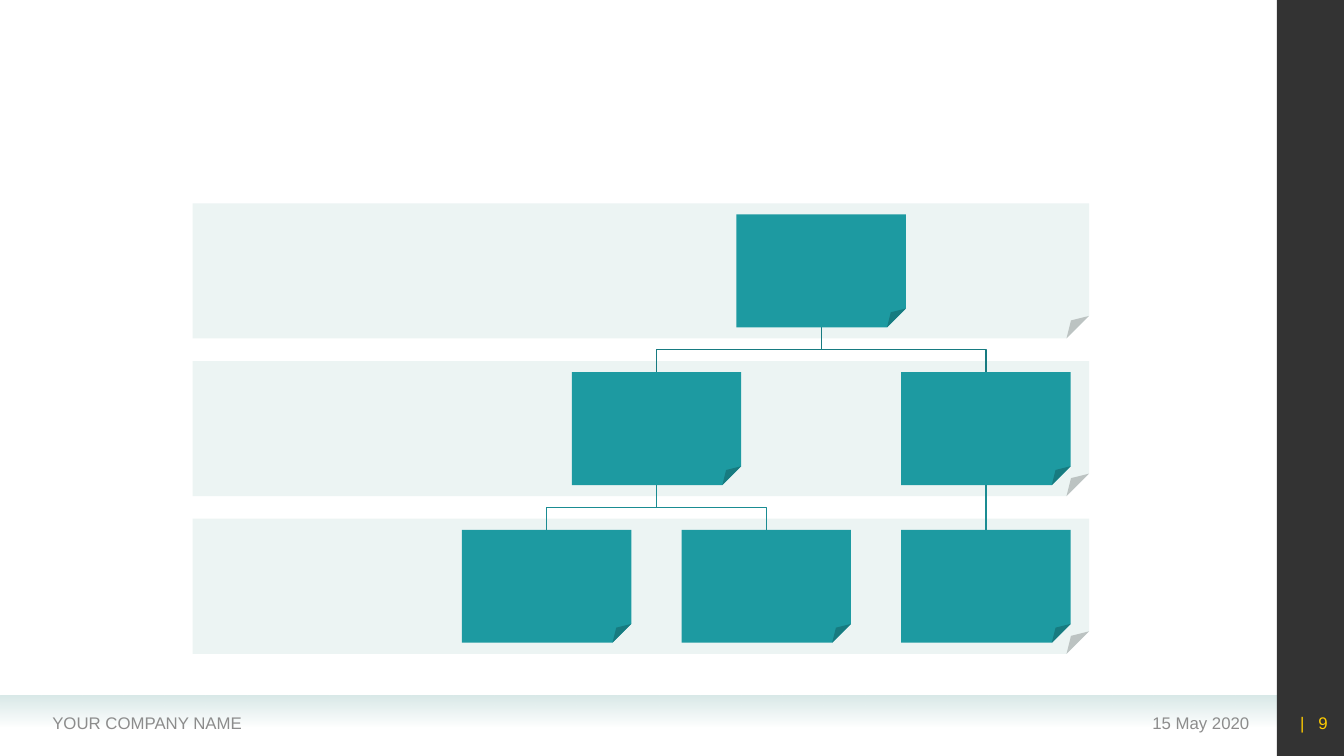
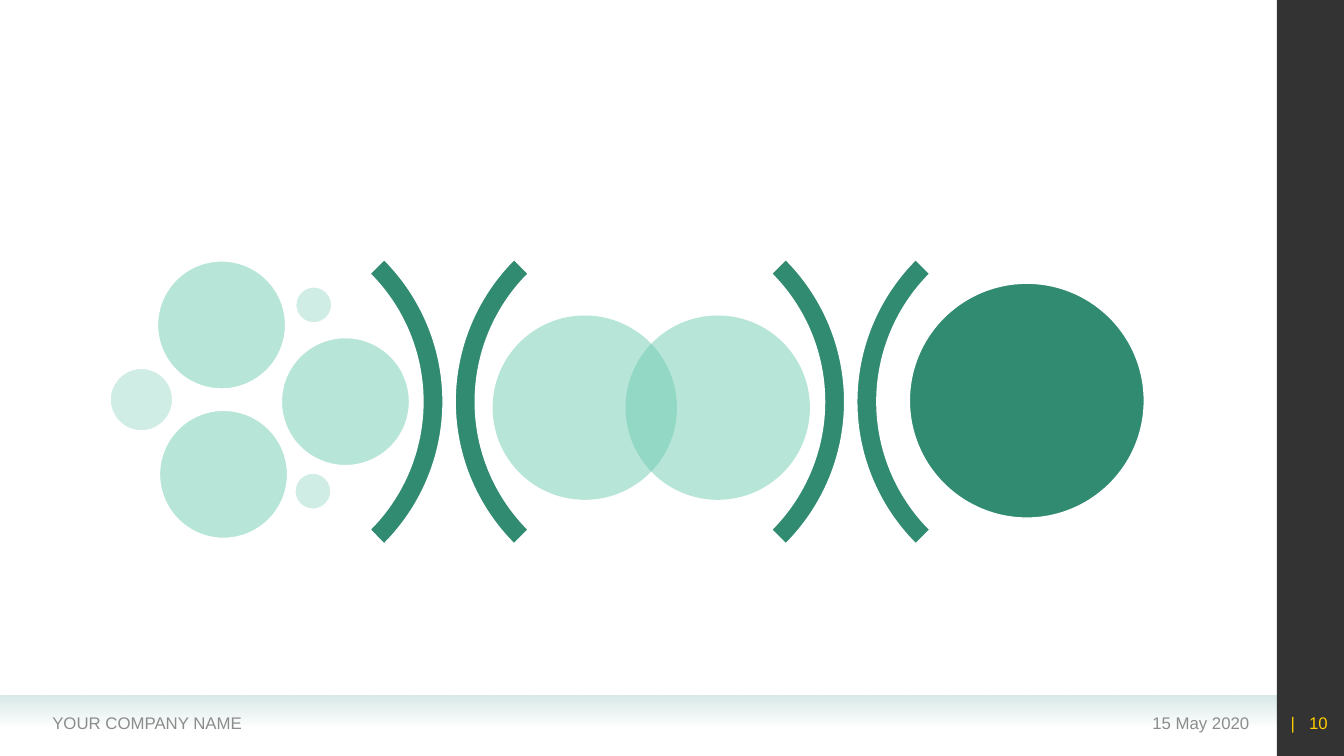
import dataclasses

import pptx
import pptx.dml.color
import pptx.enum.shapes
import pptx.enum.text
import pptx.oxml
import pptx.oxml.ns
import pptx.util

SHAPES = pptx.enum.shapes.MSO_SHAPE
ALIGN = pptx.enum.text.PP_ALIGN
qn = pptx.oxml.ns.qn


@dataclasses.dataclass(frozen=True)
class Theme:
    font: str = "Arial"
    footer_size: int = 12
    line_width: int = 1
    number_gap: int = 667
    white: str = "FFFFFF"
    footer_band: str = "D9E9E8"
    rail: str = "000000"
    footer_text: str = "8C8C8C"
    page_number: str = "FFCC00"
    level_band: str = "ECF4F3"
    card: str = "1D9AA1"
    links: tuple = ("177B81", "1A8C92")
    strong: str = "318B71"
    soft: str = "70CDB2"
    pale: str = "A0DDCC"


THEME = Theme()


@dataclasses.dataclass(frozen=True)
class Box:
    left: float
    top: float
    width: float
    height: float

    def area(self, left, top, width, height):
        return Box(
            self.left + self.width * left / 100,
            self.top + self.height * top / 100,
            self.width * width / 100,
            self.height * height / 100,
        )

    def lengths(self):
        sides = (self.left, self.top, self.width, self.height)
        return [pptx.util.Inches(side) for side in sides]

    @property
    def center_x(self):
        return self.left + self.width / 2

    @property
    def center_y(self):
        return self.top + self.height / 2

    @property
    def bottom(self):
        return self.top + self.height


SLIDE = Box(0, 0, 13.33, 7.5)


def rgb(value):
    return pptx.dml.color.RGBColor.from_string(value)


def set_opacity(shape, *percentages):
    colors = shape.element.spPr.findall(".//" + qn("a:srgbClr"))
    for color, percentage in zip(colors, percentages):
        alpha = pptx.oxml.parse_xml(
            f'<a:alpha {pptx.oxml.ns.nsdecls("a")} val="{percentage * 1000}"/>'
        )
        color.append(alpha)


def add_filled(page, kind, box, color, opacity=100, outlined=False):
    shape = page.shapes.add_shape(kind, *box.lengths())
    shape.shadow.inherit = False
    shape.fill.solid()
    shape.fill.fore_color.rgb = rgb(color)
    if opacity < 100:
        set_opacity(shape, opacity)
    if outlined:
        style_line(shape.line, THEME.white)
    else:
        shape.line.fill.background()
    return shape


def style_line(line, color):
    line.color.rgb = rgb(color)
    line.width = pptx.util.Pt(THEME.line_width)


def add_label(page, box, texts, color, align=ALIGN.LEFT):
    label = page.shapes.add_textbox(*box.lengths())
    frame = label.text_frame
    frame.word_wrap = True
    frame.vertical_anchor = pptx.enum.text.MSO_ANCHOR.MIDDLE
    para = frame.paragraphs[0]
    para.alignment = align
    for text in texts:
        span = para.add_run()
        span.text = text
        span.font.name = THEME.font
        span.font.size = pptx.util.Pt(THEME.footer_size)
        span.font.color.rgb = rgb(color)
    return label


def add_frame(page, box, number):
    band = add_filled(page, SHAPES.RECTANGLE, box.area(0, 92, 95, 4.13), THEME.footer_band)
    band.fill.gradient()
    band.fill.gradient_angle = 270
    for stop, position in zip(band.fill.gradient_stops, (0, 1)):
        stop.color.rgb = rgb(THEME.footer_band)
        stop.position = position
    set_opacity(band, 100, 0)

    add_filled(page, SHAPES.RECTANGLE, box.area(95, 0, 5, 100), THEME.rail, 80)

    footer = box.area(0, 92.93, 100, 5.33)
    add_label(page, footer.area(68.25, 0, 25.45, 100), ["15 May 2020"],
              THEME.footer_text, ALIGN.RIGHT)
    add_label(page, footer.area(3.15, 0, 36.75, 100), ["YOUR COMPANY NAME"],
              THEME.footer_text)
    label = add_label(page, footer.area(94.5, 0, 5.03, 100), ["|", " ", str(number)],
                      THEME.page_number, ALIGN.RIGHT)
    gap = label.element.findall(".//" + qn("a:rPr"))[1]
    gap.set("spc", str(THEME.number_gap))


def add_link(page, start, end, color):
    points = [start, end]
    if abs(start[0] - end[0]) > 0.01:
        middle = (start[1] + end[1]) / 2
        points[1:1] = [(start[0], middle), (end[0], middle)]
    points = [(pptx.util.Inches(x), pptx.util.Inches(y)) for x, y in points]
    if len(points) == 2:
        link = page.shapes.add_connector(
            pptx.enum.shapes.MSO_CONNECTOR.STRAIGHT, *points[0], *points[1]
        )
        style_line(link.line, color)
        link.element.spPr.append(
            pptx.oxml.parse_xml(f'<a:effectLst {pptx.oxml.ns.nsdecls("a")}/>')
        )
    else:
        outline = page.shapes.build_freeform(*points[0])
        outline.add_line_segments(points[1:], close=False)
        link = outline.convert_to_shape()
        link.shadow.inherit = False
        link.fill.background()
        style_line(link.line, color)


def add_branch(page, box, node, level=0):
    if isinstance(node, int):
        children = []
        center = 39.5 + 24.5 * node
    else:
        children = [add_branch(page, box, child, level + 1) for child in node]
        center = sum(child_center for child_center, _ in children) / len(children)
    place = box.area(center - 9.45, 35 * level + 2.46, 18.9, 25.06)
    for _, child in children:
        add_link(page, (place.center_x, place.bottom), (child.center_x, child.top),
                 THEME.links[level])
    add_filled(page, SHAPES.FOLDED_CORNER, place, THEME.card)
    return center, place


def add_hierarchy(page, box):
    for level in range(3):
        add_filled(page, SHAPES.FOLDED_CORNER, box.area(0, 35 * level, 100, 30),
                   THEME.level_band)
    add_branch(page, box, ((0, 1), (2,)))


def add_gate(page, center_x, box):
    side = box.height
    gap = 0.06
    for left, rotation in ((center_x - gap - side, 90), (center_x + gap, 270)):
        arc = add_filled(page, SHAPES.BLOCK_ARC, Box(left, box.top, side, side),
                         THEME.strong, outlined=True)
        arc.rotation = rotation
        for index, value in enumerate((135, 189, 0.05)):
            arc.adjustments[index] = value


def add_circles(page, stage, circles, opacity=50, outlined=True):
    for x, y, share, color in circles:
        size = stage.width * share / 100
        place = Box(
            stage.center_x + stage.width * x / 100 - size / 2,
            stage.center_y + stage.width * y / 100 - size / 2,
            size,
            size,
        )
        add_filled(page, SHAPES.OVAL, place, color, opacity, outlined)


def add_convergence(page, box):
    stages = [box.area(100 * index / 3, 0, 100 / 3, 100) for index in range(3)]
    for stage in stages[1:]:
        add_gate(page, stage.left, box)
    separate, overlapping, united = stages
    add_circles(page, overlapping, [
        (-16.2, 1.5, 45.9, THEME.soft),
        (16.9, 1.5, 45.9, THEME.soft),
    ], outlined=False)
    add_circles(page, separate, [
        (-6.65, -19.1, 31.9, THEME.soft),
        (-26.6, -0.5, 15.6, THEME.pale),
        (16.3, -24.1, 9, THEME.pale),
        (24.2, 0, 31.9, THEME.soft),
        (16.1, 22.3, 9, THEME.pale),
        (-6.15, 18.1, 31.9, THEME.soft),
    ])
    add_circles(page, united, [(-6.15, -0.25, 58.5, THEME.strong)], opacity=100)


def main():
    deck = pptx.Presentation()
    deck.slide_width = pptx.util.Inches(SLIDE.width)
    deck.slide_height = pptx.util.Inches(SLIDE.height)
    contents = (
        (add_hierarchy, SLIDE.area(14.33, 26.9, 66.7, 59.6)),
        (add_convergence, SLIDE.area(3.53, 26.53, 89.65, 53.2)),
    )
    for number, (add_content, box) in enumerate(contents, start=9):
        page = deck.slides.add_slide(deck.slide_layouts[6])
        add_frame(page, SLIDE, number)
        add_content(page, box)
    deck.save("out.pptx")


if __name__ == "__main__":
    main()
